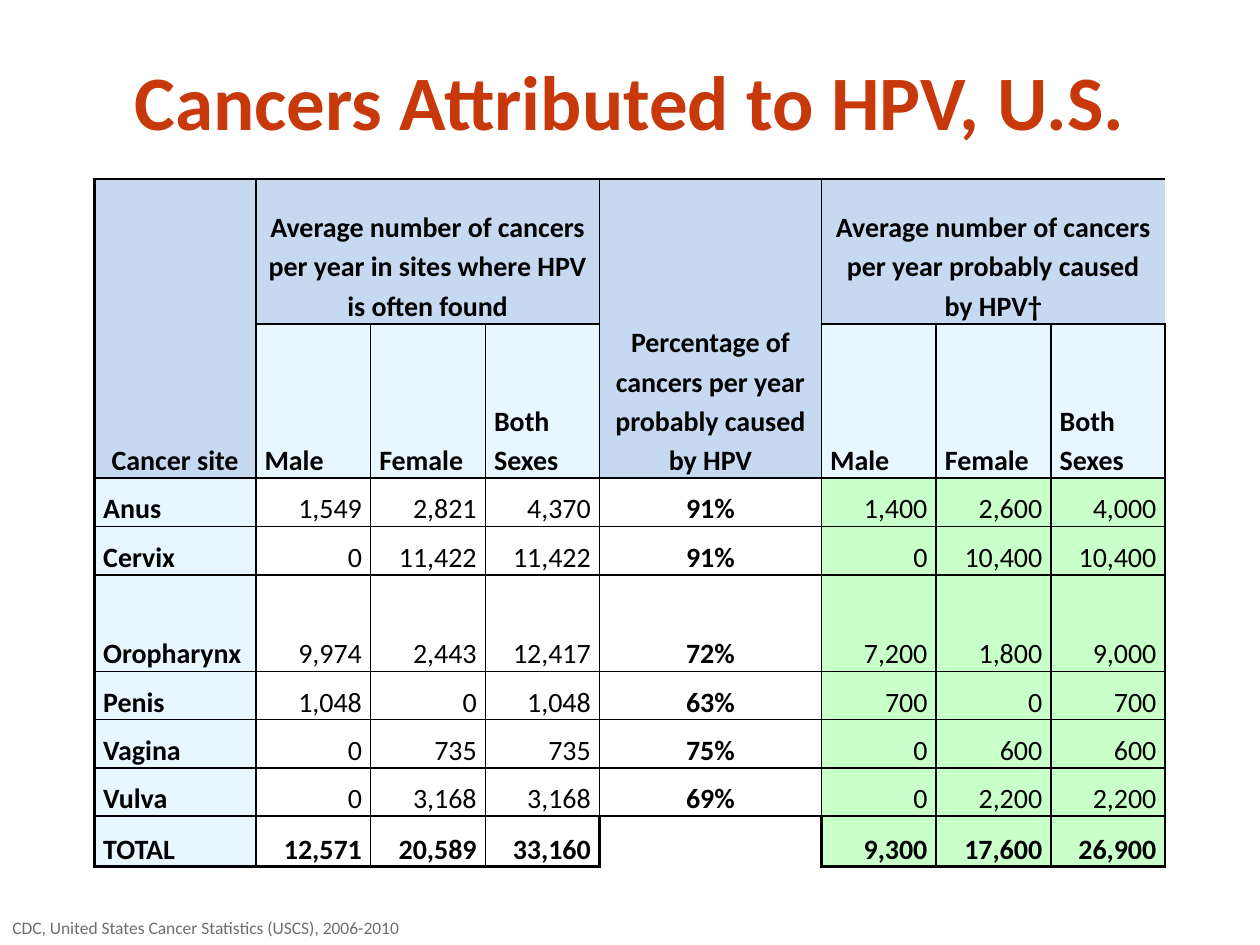
from lxml import etree
from pptx import Presentation
from pptx.dml.color import RGBColor
from pptx.enum import text as t
from pptx.oxml import ns
from pptx.util import Pt

# Content
TITLE = "Cancers Attributed to HPV, U.S."
SOURCE = "CDC, United States Cancer Statistics (USCS), 2006-2010"
SEXES = ["Male", "Female", "Both Sexes"]
ROWS = [
    ["Cancer site",
     "Average number of cancers per year in sites where HPV is often found", "", "",
     "Percentage of cancers per year probably caused by HPV",
     "Average number of cancers per year probably caused by HPV†", "", ""],
    ["", *SEXES, "", *SEXES],
    ["Anus", "1,549", "2,821", "4,370", "91%", "1,400", "2,600", "4,000"],
    ["Cervix", "0", "11,422", "11,422", "91%", "0", "10,400", "10,400"],
    ["Oropharynx", "9,974", "2,443", "12,417", "72%", "7,200", "1,800", "9,000"],
    ["Penis", "1,048", "0", "1,048", "63%", "700", "0", "700"],
    ["Vagina", "0", "735", "735", "75%", "0", "600", "600"],
    ["Vulva", "0", "3,168", "3,168", "69%", "0", "2,200", "2,200"],
    ["TOTAL", "12,571", "20,589", "33,160", "", "9,300", "17,600", "26,900"],
]
COLORS = {"title": "C7380B", "source": "6E6E6E", "ink": "000000",
          "header": "C6D9F1", "label": "E7F6FF", "caused": "C9FFC9"}
FONT = "Calibri"
SEX_WIDTHS = [65.6, 65.6, 65.2]
COLUMN_WIDTHS = [92.2, *SEX_WIDTHS, 126.8, *SEX_WIDTHS]
ROW_HEIGHTS = [82.8, 55.2, 27.6, 27.6, 55.2, 27.6, 27.6, 27.6, 28.8]
MERGES = [(0, 0, 1, 0), (0, 1, 0, 3), (0, 4, 1, 4), (0, 5, 0, 7)]
PERCENT, TOTAL = 4, len(ROWS) - 1
THIN, THICK = 1, 1.5
THICK_VERTICALS, THICK_HORIZONTALS = {0, 1, 8}, {0, 2, 9}


def add_run(paragraph, words, size, color, bold=False):
    run = paragraph.add_run()
    run.text = words
    run.font.name, run.font.size, run.font.bold = FONT, Pt(size), bold
    run.font.color.rgb = RGBColor.from_string(COLORS[color])


def cell_fill(row, column):
    if row == 0 or (row == 1 and column in (0, PERCENT)):
        return "header"
    if row == 1 or column == 0:
        return "label"
    return "caused" if column > PERCENT else None


def cell_alignment(row, column):
    if row == 0 or column == PERCENT:
        return t.PP_ALIGN.CENTER
    return t.PP_ALIGN.LEFT if row == 1 or column == 0 else t.PP_ALIGN.RIGHT


def border_widths(row, column):
    """Widths of the left, right, top and bottom borders; None hides one."""
    top, left, bottom, right = next(
        (m for m in MERGES if m[0] <= row <= m[2] and m[1] <= column <= m[3]),
        (row, column, row, column))

    def vertical(line):
        beside_gap = row == TOTAL and line in (PERCENT, PERCENT + 1)
        return THICK if line in THICK_VERTICALS or beside_gap else THIN

    def horizontal(line):
        above_gap = column == PERCENT and line == TOTAL
        return THICK if line in THICK_HORIZONTALS or above_gap else THIN

    in_gap = (row, column) == (TOTAL, PERCENT)
    return {"lnL": vertical(column) if column == left else None,
            "lnR": vertical(column + 1) if column == right else None,
            "lnT": horizontal(row) if row == top else None,
            "lnB": horizontal(row + 1) if row == bottom and not in_gap else None}


def set_borders(cell, widths):
    properties = cell._tc.get_or_add_tcPr()
    for index, (tag, width) in enumerate(widths.items()):
        line = etree.Element(ns.qn(f"a:{tag}"), w=str(int(Pt(width or 0))))
        if width:
            fill = etree.SubElement(line, ns.qn("a:solidFill"))
            etree.SubElement(fill, ns.qn("a:srgbClr"), val=COLORS["ink"])
        else:
            etree.SubElement(line, ns.qn("a:noFill"))
        properties.insert(index, line)


def format_cell(cell, row, column, words):
    cell.margin_left = cell.margin_right = Pt(5)
    cell.margin_top = cell.margin_bottom = Pt(0)
    cell.vertical_anchor = t.MSO_ANCHOR.BOTTOM
    fill = cell_fill(row, column)
    if fill:
        cell.fill.solid()
        cell.fill.fore_color.rgb = RGBColor.from_string(COLORS[fill])
    else:
        cell.fill.background()
    set_borders(cell, border_widths(row, column))
    if words:
        paragraph = cell.text_frame.paragraphs[0]
        paragraph.alignment = cell_alignment(row, column)
        paragraph.line_spacing = 1.15
        bold = row < 2 or row == TOTAL or column in (0, PERCENT)
        add_run(paragraph, words, 16, "ink", bold)


presentation = Presentation()
presentation.slide_width, presentation.slide_height = Pt(720), Pt(540)
slide = presentation.slides.add_slide(presentation.slide_layouts[5])

# Title
title = slide.shapes.title
title.left, title.top, title.width, title.height = Pt(36), Pt(12.24), Pt(648), Pt(90)
title.text_frame.vertical_anchor = t.MSO_ANCHOR.MIDDLE
title_paragraph = title.text_frame.paragraphs[0]
title_paragraph.alignment = t.PP_ALIGN.CENTER
add_run(title_paragraph, TITLE, 44, "title", True)

# Source line
source = slide.shapes.add_textbox(Pt(0), Pt(520.6), Pt(426), Pt(19.4))
source.text_frame.word_wrap = True
source_paragraph = source.text_frame.paragraphs[0]
source_paragraph.space_after = Pt(6)
add_run(source_paragraph, SOURCE, 10, "source")

# Table
table = slide.shapes.add_table(
    len(ROWS), len(COLUMN_WIDTHS), Pt(54), Pt(102.24),
    Pt(sum(COLUMN_WIDTHS)), Pt(sum(ROW_HEIGHTS))).table
table.first_row = table.horz_banding = False
for column, width in zip(table.columns, COLUMN_WIDTHS):
    column.width = Pt(width)
for row, height in zip(table.rows, ROW_HEIGHTS):
    row.height = Pt(height)
for top, left, bottom, right in MERGES:
    table.cell(top, left).merge(table.cell(bottom, right))
for row, values in enumerate(ROWS):
    for column, words in enumerate(values):
        format_cell(table.cell(row, column), row, column, words)

presentation.save("out.pptx")
